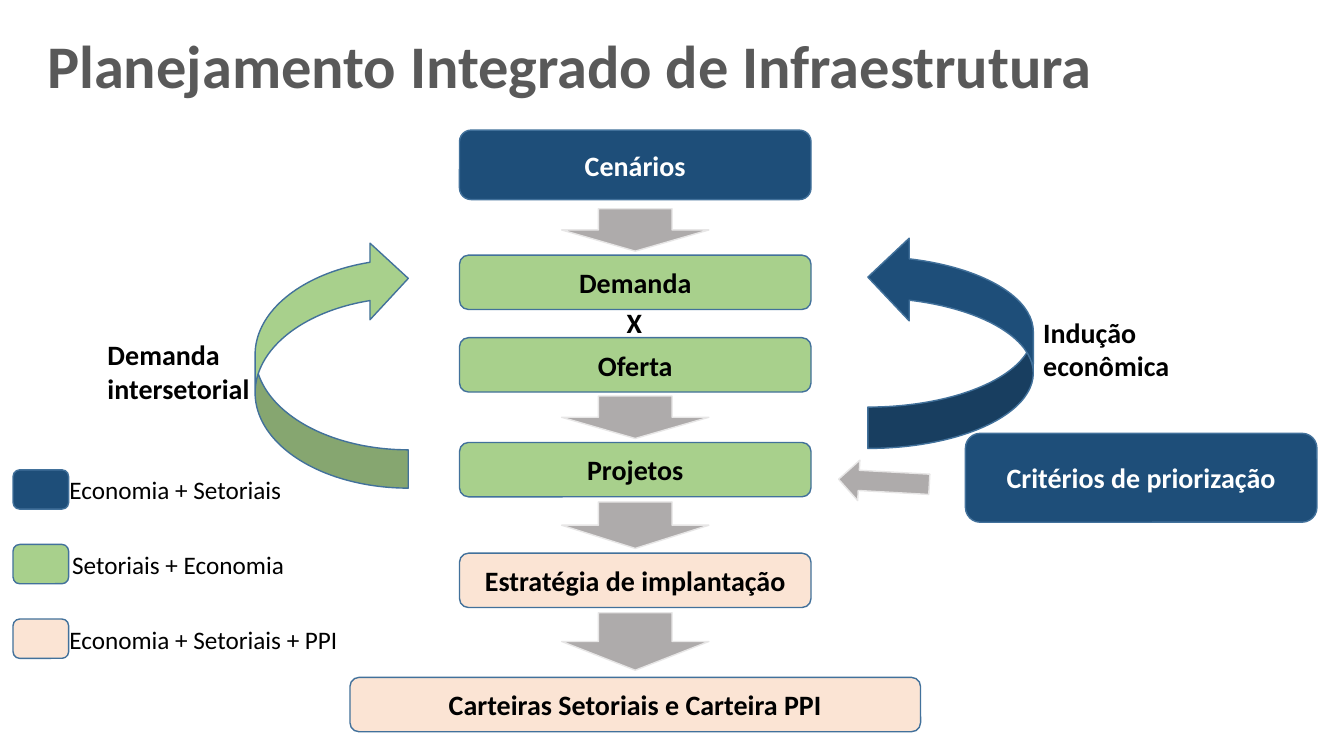
from pptx import Presentation
from pptx.dml.color import RGBColor
from pptx.enum.shapes import MSO_SHAPE
from pptx.enum.text import MSO_ANCHOR, PP_ALIGN
from pptx.util import Cm, Pt

NAVY, GREEN, PEACH = "1E4E79", "A8D08C", "FBE4D4"
BORDER, GRAY, PALE = "42719B", "AEABAB", "E7E6E6"
BLACK, WHITE, TITLE_GRAY = "000000", "FFFFFF", "595959"

STRONG = {"name": "Calibri", "size": Pt(20), "bold": True}
LEGEND = {"name": "Calibri", "size": Pt(18), "bold": False}
HEADING = {"name": "Calibri", "size": Pt(43.2), "bold": True}

AXIS = 16.01
STEP_WIDTH = 8.86
STEP_HEIGHT = 1.37

STEPS = [
    ("Cenários", 3.28, STEP_WIDTH, 1.75, NAVY),
    ("Demanda", 6.43, STEP_WIDTH, STEP_HEIGHT, GREEN),
    ("Oferta", 8.51, STEP_WIDTH, STEP_HEIGHT, GREEN),
    ("Projetos", 11.15, STEP_WIDTH, STEP_HEIGHT, GREEN),
    ("Estratégia de implantação", 13.94, STEP_WIDTH, STEP_HEIGHT, PEACH),
    ("Carteiras Setoriais e Carteira PPI", 17.07, 14.38, STEP_HEIGHT, PEACH),
]
DOWN_ARROWS = [(5.26, 1.07), (9.98, 1.07), (12.65, 1.17), (15.44, 1.45)]
LEGEND_ROWS = [
    ("Economia + Setoriais", 1.5, NAVY),
    ("Setoriais + Economia", 1.57, GREEN),
    ("Economia + Setoriais + PPI", 1.5, PEACH),
]


def color(hex_value):
    return RGBColor.from_string(hex_value)


def write(frame, lines, style, text_color, align=PP_ALIGN.LEFT):
    frame.word_wrap = True
    for index, line in enumerate(lines):
        paragraph = frame.paragraphs[0] if index == 0 else frame.add_paragraph()
        paragraph.text = line
        paragraph.alignment = align
        for attribute, value in style.items():
            setattr(paragraph.font, attribute, value)
        paragraph.font.color.rgb = color(text_color)


def add_figure(slide, kind, box, fill, border=BORDER, rotation=0):
    figure = slide.shapes.add_shape(kind, *map(Cm, box))
    figure.shadow.inherit = False
    figure.fill.solid()
    figure.fill.fore_color.rgb = color(fill)
    figure.line.color.rgb = color(border)
    figure.line.width = Pt(1)
    figure.rotation = rotation
    return figure


def add_step(slide, text, box, fill):
    step = add_figure(slide, MSO_SHAPE.ROUNDED_RECTANGLE, box, fill)
    step.text_frame.vertical_anchor = MSO_ANCHOR.MIDDLE
    text_color = WHITE if fill == NAVY else BLACK
    write(step.text_frame, [text], STRONG, text_color, PP_ALIGN.CENTER)


def add_label(slide, lines, box, style=STRONG, text_color=BLACK):
    label = slide.shapes.add_textbox(*map(Cm, box))
    write(label.text_frame, lines, style, text_color)
    return label


def add_title(slide, text):
    title = add_label(slide, [text], (0.94, 0.25, 29.21, 2.97), HEADING, TITLE_GRAY)
    title.text_frame.vertical_anchor = MSO_ANCHOR.MIDDLE
    title.text_frame.paragraphs[0].line_spacing = 0.9


def add_flow(slide):
    for text, top, width, height, fill in STEPS:
        add_step(slide, text, (AXIS - width / 2, top, width, height), fill)
    arrow_width = 3.71
    for top, height in DOWN_ARROWS:
        box = (AXIS - arrow_width / 2, top, arrow_width, height)
        add_figure(slide, MSO_SHAPE.DOWN_ARROW, box, GRAY, PALE)
    add_label(slide, ["X"], (15.54, 7.57, 0.91, 1.12))


def add_feedback(slide):
    demand_loop = add_figure(slide, MSO_SHAPE.CURVED_RIGHT_ARROW,
                             (6.43, 6.05, 3.86, 6.25), GREEN, rotation=180)
    demand_loop.element.spPr.get_or_add_xfrm().set("flipH", "1")
    add_label(slide, ["Demanda", "intersetorial"], (2.46, 8.38, 4.2, 1.96))

    add_figure(slide, MSO_SHAPE.CURVED_RIGHT_ARROW,
               (21.87, 5.94, 4.17, 5.36), NAVY, rotation=180)
    add_label(slide, ["Indução", "econômica"], (26.04, 7.82, 3.8, 1.96))


def add_criteria(slide):
    add_step(slide, "Critérios de priorização", (24.33, 10.92, STEP_WIDTH, 2.24), NAVY)
    add_figure(slide, MSO_SHAPE.RIGHT_ARROW, (21.13, 11.63, 2.29, 1.02),
               GRAY, PALE, rotation=183.2)


def add_legend(slide):
    for row, (text, left, fill) in enumerate(LEGEND_ROWS):
        top = 11.84 + row * 1.88
        add_figure(slide, MSO_SHAPE.ROUNDED_RECTANGLE, (0.33, top, 1.4, 0.99), fill)
        add_label(slide, [text], (left, top, 7.4, 1.02), LEGEND)


def main():
    presentation = Presentation()
    presentation.slide_width = Cm(33.87)
    presentation.slide_height = Cm(19.05)
    slide = presentation.slides.add_slide(presentation.slide_layouts[6])
    add_title(slide, "Planejamento Integrado de Infraestrutura")
    add_feedback(slide)
    add_flow(slide)
    add_criteria(slide)
    add_legend(slide)
    presentation.save("out.pptx")


if __name__ == "__main__":
    main()
